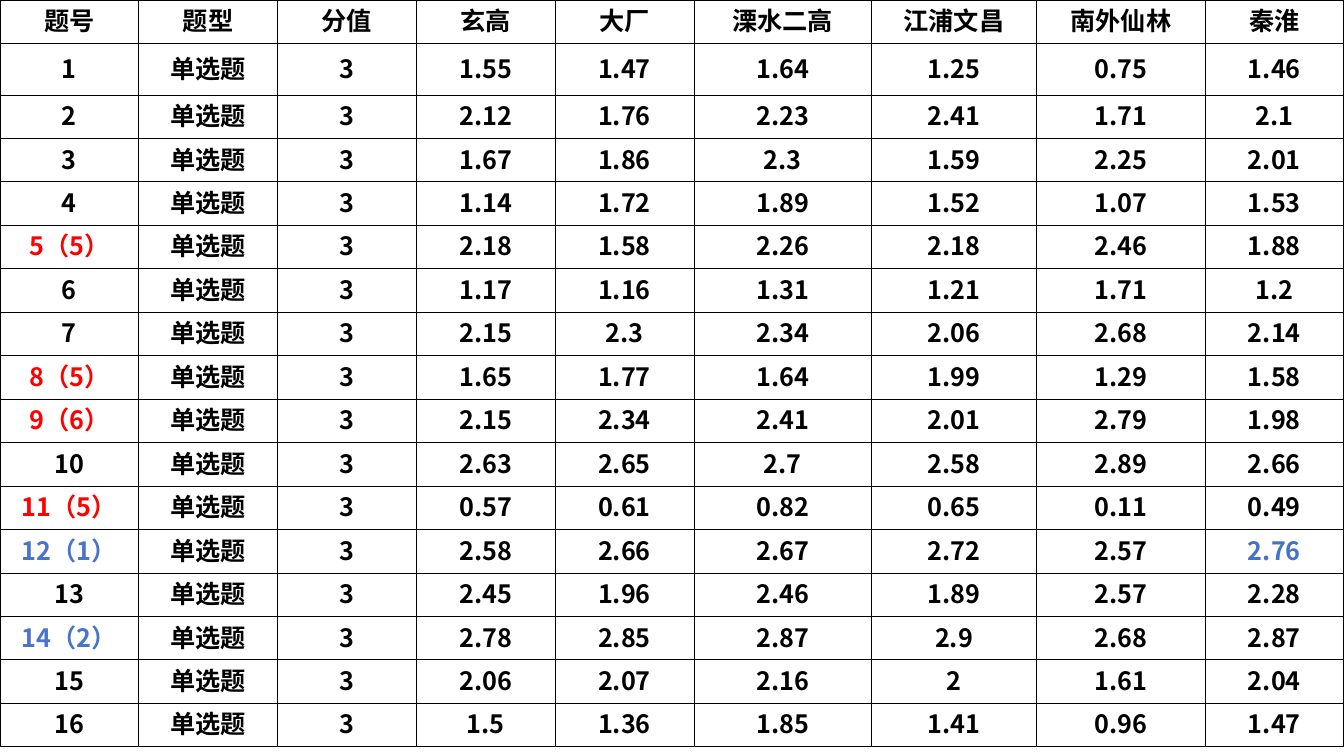
from dataclasses import dataclass

from lxml.etree import SubElement
from pptx import Presentation
from pptx.dml.color import RGBColor
from pptx.enum.text import MSO_ANCHOR, PP_ALIGN
from pptx.oxml.ns import qn
from pptx.util import Inches, Pt


@dataclass(frozen=True)
class Theme:
    """Colours, fonts and sizes of the slide."""
    ink: str = "000000"
    red: str = "FF0000"
    blue: str = "4874CB"
    best: str = "4472C4"
    words: str = "Arial"
    digits: str = "Noto Sans CJK SC"
    size: int = 18
    rule: float = 0.5


THEME = Theme()
WIDTH, HEIGHT = 13.33, 7.5
TABLE_BOX = (0, 0, WIDTH, 7.41)
WIDE_COLS = {5: 1.76, 6: 1.64, 7: 1.67}
TALL_ROWS = {1: 0.51}
HEAD = "题号 题型 分值 玄高 大厂 溧水二高 江浦文昌 南外仙林 秦淮".split()
KIND, POINTS = "单选题", "3"
SCORES = """
1 1.55 1.47 1.64 1.25 0.75 1.46
2 2.12 1.76 2.23 2.41 1.71 2.1
3 1.67 1.86 2.3 1.59 2.25 2.01
4 1.14 1.72 1.89 1.52 1.07 1.53
5（5） 2.18 1.58 2.26 2.18 2.46 1.88
6 1.17 1.16 1.31 1.21 1.71 1.2
7 2.15 2.3 2.34 2.06 2.68 2.14
8（5） 1.65 1.77 1.64 1.99 1.29 1.58
9（6） 2.15 2.34 2.41 2.01 2.79 1.98
10 2.63 2.65 2.7 2.58 2.89 2.66
11（5） 0.57 0.61 0.82 0.65 0.11 0.49
12（1） 2.58 2.66 2.67 2.72 2.57 2.76
13 2.45 1.96 2.46 1.89 2.57 2.28
14（2） 2.78 2.85 2.87 2.9 2.68 2.87
15 2.06 2.07 2.16 2 1.61 2.04
16 1.5 1.36 1.85 1.41 0.96 1.47
"""
MARKS = {
    **{(row, 0): THEME.red for row in (5, 8, 9, 11)},
    **{(row, 0): THEME.blue for row in (12, 14)},
    (12, 8): THEME.best,
}


def get_rows():
    """Return the header and the score rows as lists of text."""
    lines = [line.split() for line in SCORES.strip().splitlines()]
    return [HEAD] + [[num, KIND, POINTS, *marks] for num, *marks in lines]


def share(total, count, fixed):
    """Split a length into fixed parts and equal shares of the rest."""
    rest = (total - sum(fixed.values())) / (count - len(fixed))
    return [Inches(fixed.get(i, rest)) for i in range(count)]


def add_rules(cell):
    """Draw a thin line on each side of a cell."""
    props = cell._tc.get_or_add_tcPr()
    for i, side in enumerate(("lnL", "lnR", "lnT", "lnB")):
        line = props.makeelement(qn(f"a:{side}"), {"w": str(Pt(THEME.rule))})
        fill = SubElement(line, qn("a:solidFill"))
        SubElement(fill, qn("a:srgbClr"), val=THEME.ink)
        props.insert(i, line)


def fill_cell(cell, text, face, color):
    """Write centred bold text into a clear, ruled cell."""
    cell.fill.background()
    add_rules(cell)
    cell.vertical_anchor = MSO_ANCHOR.MIDDLE
    cell.margin_left = cell.margin_right = cell.margin_top = Inches(0.01)
    cell.margin_bottom = Inches(0.05)
    cell.text = text
    para = cell.text_frame.paragraphs[0]
    para.alignment = PP_ALIGN.CENTER
    para.font.name = face
    para.font.size = Pt(THEME.size)
    para.font.bold = True
    para.font.color.rgb = RGBColor.from_string(color)


def add_scores(slide, box):
    """Place the score table in the given box."""
    rows = get_rows()
    frame = slide.shapes.add_table(len(rows), len(HEAD), *map(Inches, box))
    table = frame.table
    table.first_row = table.horz_banding = False
    for col, width in zip(table.columns, share(box[2], len(HEAD), WIDE_COLS)):
        col.width = width
    for row, height in zip(table.rows, share(box[3], len(rows), TALL_ROWS)):
        row.height = height
    for r, texts in enumerate(rows):
        for c, text in enumerate(texts):
            face = THEME.words if r == 0 or c == 1 else THEME.digits
            fill_cell(table.cell(r, c), text, face, MARKS.get((r, c), THEME.ink))


def main():
    """Build and save the deck."""
    deck = Presentation()
    deck.slide_width, deck.slide_height = Inches(WIDTH), Inches(HEIGHT)
    slide = deck.slides.add_slide(deck.slide_layouts[6])
    add_scores(slide, TABLE_BOX)
    deck.save("out.pptx")


if __name__ == "__main__":
    main()
